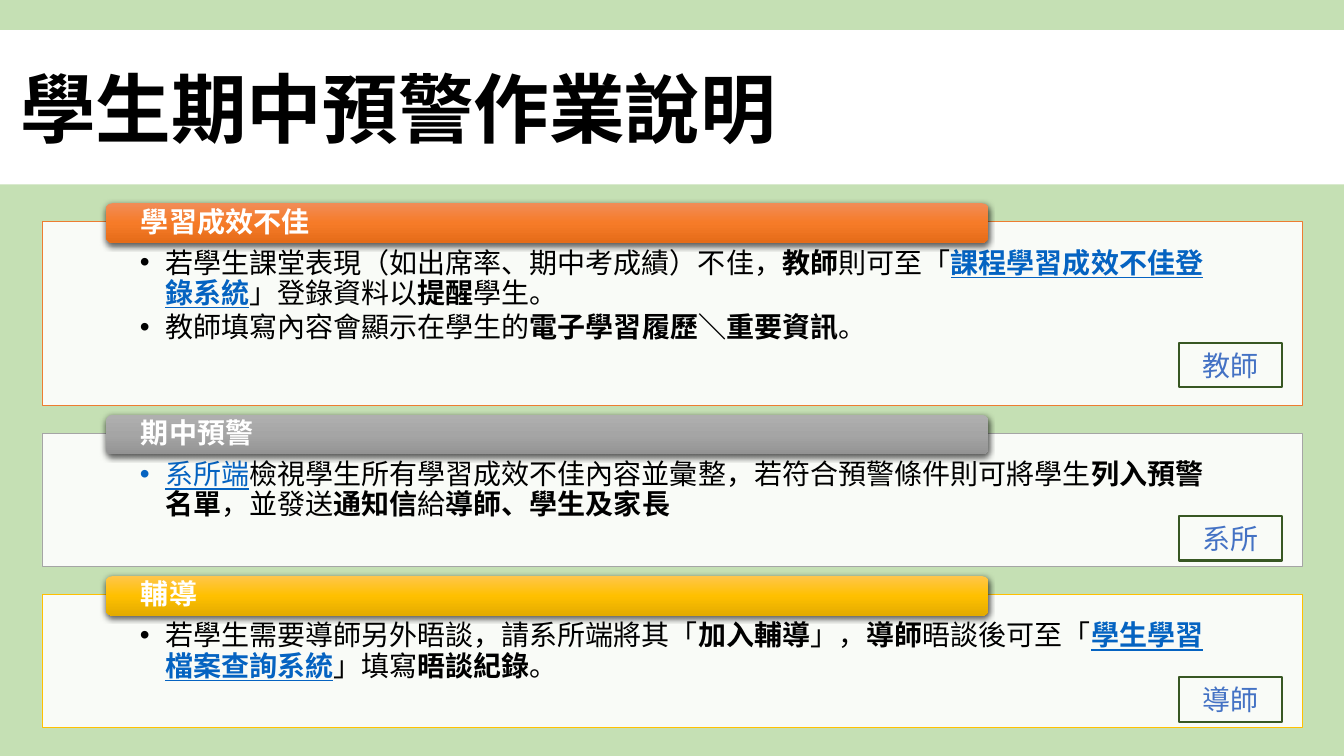
from copy import deepcopy

from lxml.etree import SubElement as Sub
from pptx import Presentation
from pptx.dml.color import RGBColor as Color
from pptx.enum.shapes import MSO_SHAPE as Kind
from pptx.enum.text import MSO_ANCHOR as Anchor, PP_ALIGN as Align
from pptx.oxml.ns import qn
from pptx.util import Inches, Pt

THEME = {
    "font": "Noto Sans CJK SC",
    "title_size": 54, "body_size": 20,
    "backdrop": "C5E0B4", "paper": "FFFFFF", "ink": "000000",
    "link": "0563C1", "tag": "4472C4", "tag_line": "385723",
}

SECTIONS = [
    {
        "heading": "學習成效不佳", "role": "教師", "height": 4.37, "tag_rise": 1.49,
        "line": "ED7D31", "shades": ["F18C57", "F67B28", "E56C19"],
        "bullets": [
            [("若學生課堂表現（如出席率、期中考成績）不佳，", ""), ("教師", "bold"),
             ("則可至「", ""), ("課程學習成效不佳登錄系統", "bold link"),
             ("」登錄資料以", ""), ("提醒", "bold"), ("學生。", "")],
            [("教師填寫內容會顯示在學生的", ""),
             ("電子學習履歷＼重要資訊", "bold"), ("。", "")],
        ],
    },
    {
        "heading": "期中預警", "role": "系所", "height": 3.17, "tag_rise": 1.2,
        "line": "A5A5A5", "shades": ["AFAFAF", "A5A5A5", "939393"],
        "bullets": [
            [("系所端", "link"),
             ("檢視學生所有學習成效不佳內容並彙整，若符合預警條件則可將學生", ""),
             ("列入預警名單", "bold"), ("，並發送", ""), ("通知信", "bold"),
             ("給", ""), ("導師、學生及家長", "bold")],
        ],
    },
    {
        "heading": "輔導", "role": "導師", "height": 3.17, "tag_rise": 1.2,
        "line": "FFC000", "shades": ["FFC64B", "FFC000", "E3AB00"],
        "bullets": [
            [("若學生需要導師另外晤談，請系所端將其「", ""), ("加入輔導", "bold"),
             ("」，", ""), ("導師", "bold"), ("晤談後可至「", ""),
             ("學生學習檔案查詢系統", "bold link"), ("」填寫", ""),
             ("晤談紀錄", "bold"), ("。", "")],
        ],
    },
]

deck = Presentation()
deck.slide_width, deck.slide_height = Inches(13.33), Inches(7.5)
page = deck.slides.add_slide(deck.slide_layouts[6])
COLUMNS = 32
UNIT = deck.slide_width / COLUMNS
ROWS = deck.slide_height / UNIT


def add_box(cells, kind=Kind.RECTANGLE, fill=None, line=None, weight=0.5, **frame_format):
    box = page.shapes.add_shape(kind, *(round(cell * UNIT) for cell in cells))
    box.shadow.inherit = False
    for part, color in ((box.fill, fill), (box.line.fill, line)):
        if color:
            part.solid()
            part.fore_color.rgb = Color.from_string(color)
        else:
            part.background()
    if line:
        box.line.width = Pt(weight)
    for name, value in ({"word_wrap": True} | frame_format).items():
        setattr(box.text_frame, name, value)
    return box


def add_span(para, text, color, size=THEME["body_size"], **font_format):
    span = para.add_run()
    span.text = text
    span.font.color.rgb = Color.from_string(color)
    for name, value in ({"name": THEME["font"], "size": Pt(size)} | font_format).items():
        setattr(span.font, name, value)
    Sub(span.font._element, qn("a:ea"), typeface=THEME["font"])


add_box((0, 0, COLUMNS, ROWS), fill=THEME["backdrop"])
add_box((0, 0.72, COLUMNS, 3.67), fill=THEME["paper"])
title = add_box((0.24, 1.61, 20.4, 2.35), vertical_anchor=Anchor.TOP)
title_para = title.text_frame.paragraphs[0]
title_para.alignment, title_para.line_spacing = Align.LEFT, 0.9
add_span(title_para, "學生期中預警作業說明", THEME["title_size"] and THEME["ink"],
         THEME["title_size"], bold=True)

GAP = 0.67
top = 5.28
for section in SECTIONS:
    panel = add_box((1, top, 30.02, section["height"]), fill=THEME["paper"],
                    line=section["line"], vertical_anchor=Anchor.TOP,
                    margin_left=Inches(0.97), margin_right=Inches(0.97),
                    margin_top=Inches(0.27), margin_bottom=Inches(0.16))
    Sub(panel._element.spPr.find(".//" + qn("a:srgbClr")), qn("a:alpha"), val="90000")
    for index, bullet in enumerate(section["bullets"]):
        frame = panel.text_frame
        para = frame.add_paragraph() if index else frame.paragraphs[0]
        for name, value in {"level": 1, "alignment": Align.LEFT,
                            "line_spacing": 0.9, "space_after": Pt(3)}.items():
            setattr(para, name, value)
        layout = para._p.get_or_add_pPr()
        layout.set("marL", str(Inches(0.25)))
        layout.set("indent", str(-Inches(0.25)))
        Sub(layout, qn("a:buFont"), typeface="Arial")
        Sub(layout, qn("a:buChar"), char="•")
        for text, style in bullet:
            linked = "link" in style
            add_span(para, text, THEME["link" if linked else "ink"],
                     bold="bold" in style, underline=linked)

    banner = add_box((2.52, top - 0.44, 21.02, 0.94), Kind.ROUNDED_RECTANGLE,
                     vertical_anchor=Anchor.MIDDLE,
                     margin_left=Inches(0.33), margin_right=Inches(0.33),
                     margin_top=0, margin_bottom=0)
    banner.fill.gradient()
    banner.fill.gradient_angle = 270
    stops = banner._element.spPr.find(".//" + qn("a:gsLst"))
    stops.append(deepcopy(stops[0]))
    for stop, position, shade in zip(banner.fill.gradient_stops, (0, 0.5, 1), section["shades"]):
        stop.position = position
        stop.color.rgb = Color.from_string(shade)
    shadow = Sub(banner._element.spPr.find(qn("a:effectLst")), qn("a:outerShdw"),
                 blurRad=str(Pt(4.5)), dist=str(Pt(1.5)), dir="5400000",
                 algn="ctr", rotWithShape="0")
    Sub(Sub(shadow, qn("a:srgbClr"), val=THEME["ink"]), qn("a:alpha"), val="63000")
    heading = banner.text_frame.paragraphs[0]
    heading.alignment, heading.line_spacing = Align.LEFT, 0.9
    add_span(heading, section["heading"], THEME["paper"], bold=True)
    top += section["height"] + GAP

bottom = 5.28
for section in SECTIONS:
    bottom += section["height"]
    tag = add_box((28.08, bottom - section["tag_rise"], 2.45, 1.06),
                  line=THEME["tag_line"], weight=1.5, vertical_anchor=Anchor.MIDDLE)
    tag.text_frame.paragraphs[0].alignment = Align.CENTER
    add_span(tag.text_frame.paragraphs[0], section["role"], THEME["tag"])
    bottom += GAP

deck.save("out.pptx")
